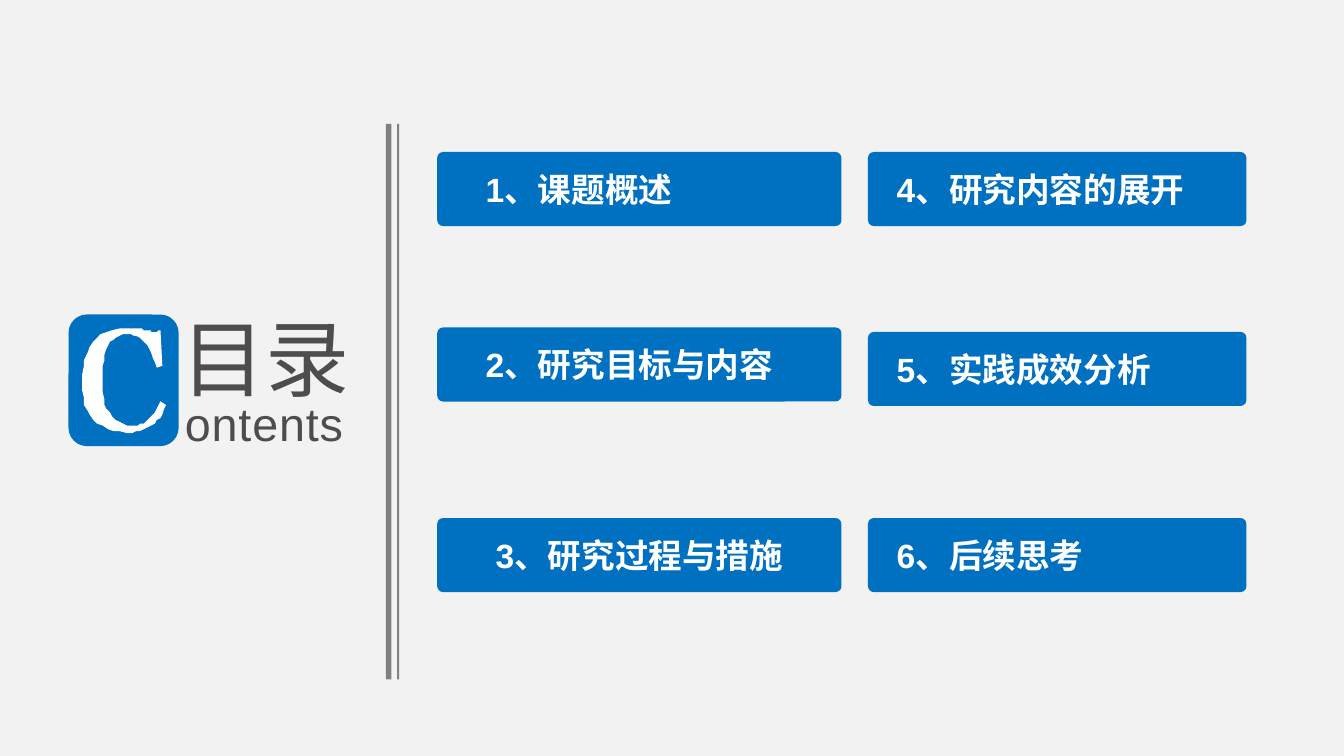
from pptx import Presentation
from pptx.dml.color import RGBColor
from pptx.enum.shapes import MSO_SHAPE
from pptx.enum.text import MSO_ANCHOR, MSO_AUTO_SIZE, PP_ALIGN
from pptx.util import Pt

BLUE = RGBColor(0x00, 0x70, 0xC0)
WHITE = RGBColor(0xFF, 0xFF, 0xFF)
PALE = RGBColor(0xF2, 0xF2, 0xF2)
DARK = RGBColor(0x4D, 0x4D, 0x4D)
GRAY = RGBColor(0x80, 0x80, 0x80)


def write(shape, text, size, color, bold=False, align=PP_ALIGN.LEFT,
          anchor=MSO_ANCHOR.MIDDLE, inset=(0, 0), wrap=False, spacing=0):
    frame = shape.text_frame
    frame.auto_size = MSO_AUTO_SIZE.NONE
    frame.word_wrap = wrap
    frame.vertical_anchor = anchor
    frame.margin_left, frame.margin_right = Pt(inset[0]), Pt(inset[1])
    frame.margin_top = frame.margin_bottom = 0
    para = frame.paragraphs[0]
    para.alignment = align
    span = para.add_run()
    span.text = text
    span.font.name = "Arial"
    span.font.size = Pt(size)
    span.font.bold = bold
    span.font.color.rgb = color
    if spacing:
        span.font._element.set("spc", str(round(spacing * 100)))


def paint(shape, color):
    shape.fill.solid()
    shape.fill.fore_color.rgb = color
    shape.line.fill.background()
    shape.shadow.inherit = False


deck = Presentation()
deck.slide_width, deck.slide_height = Pt(720), Pt(405)
page = deck.slides.add_slide(deck.slide_layouts[5])
page.background.fill.solid()
page.background.fill.fore_color.rgb = PALE

# Title and the rest of the word beside the badge
title = page.shapes.title
title.left, title.top, title.width, title.height = Pt(97), Pt(158), Pt(94), Pt(66)
write(title, "目录", 45, DARK)
subtitle = page.shapes.add_textbox(Pt(99), Pt(211.4), Pt(92), Pt(30))
write(subtitle, "ontents", 25, DARK, anchor=MSO_ANCHOR.TOP, spacing=0.5)

# Badge with a decorative initial
badge = page.shapes.add_shape(
    MSO_SHAPE.ROUNDED_RECTANGLE, Pt(36.7), Pt(168.5), Pt(59), Pt(70.5))
paint(badge, BLUE)

# Each curve: two control points and an end point; each line: an end point
start = (87.2, 195.6)
segments = [
    [(85.8, 177.1)],
    [(84, 178), (82, 178), (79.2, 177.1)],
    [(75, 175.8), (71.5, 175.5), (67.7, 175.7)],
    [(51.8, 176.4), (43.9, 185.8), (43.9, 205.2)],
    [(43.9, 222.5), (52.1, 231.1), (68.4, 231.8)],
    [(78.5, 231.8), (85.4, 227), (88.6, 217.1)],
    [(85.7, 215.3)],
    [(82.1, 223.9), (77, 228.2), (70.6, 228.2)],
    [(59.8, 227.5), (54.7, 219.2), (54.7, 203)],
    [(54.7, 187.2), (59, 179.3), (68.4, 179.3)],
    [(75.6, 179.3), (80.6, 185), (83.5, 197.3)],
]
outline = [start]
for segment in segments:
    if len(segment) == 1:
        outline += segment
        continue
    points = [outline[-1], *segment]
    for step in range(1, 13):
        t = step / 12
        weights = ((1 - t) ** 3, 3 * t * (1 - t) ** 2, 3 * t * t * (1 - t), t ** 3)
        outline.append(tuple(sum(w * p[axis] for w, p in zip(weights, points))
                             for axis in (0, 1)))
builder = page.shapes.build_freeform(*start, scale=Pt(1))
builder.add_line_segments(outline[1:], close=True)
paint(builder.convert_to_shape(), WHITE)

# Double divider
for left, width in ((206.8, 2.9), (212.8, 1)):
    bar = page.shapes.add_shape(
        MSO_SHAPE.RECTANGLE, Pt(left), Pt(66.4), Pt(width), Pt(297.6))
    paint(bar, GRAY)

# Contents entries: left, width, text indent, then (top, text)
columns = [
    (234.2, 216.6, 25, [(81.4, "1、课题概述"), (175.4, "2、研究目标与内容"),
                        (277.5, "3、研究过程与措施")]),
    (465, 202.8, 14.5, [(81.4, "4、研究内容的展开"), (177.8, "5、实践成效分析"),
                        (277.5, "6、后续思考")]),
]
for left, width, indent, entries in columns:
    for top, text in entries:
        box = page.shapes.add_shape(
            MSO_SHAPE.ROUNDED_RECTANGLE, Pt(left), Pt(top), Pt(width), Pt(39.7))
        box.adjustments[0] = 0.08
        paint(box, BLUE)
        centred = text.startswith("3")
        write(box, text, 18, WHITE, bold=True, wrap=True,
              align=PP_ALIGN.CENTER if centred else PP_ALIGN.LEFT,
              inset=(5, 5) if centred else (indent, 5))

deck.save("out.pptx")
